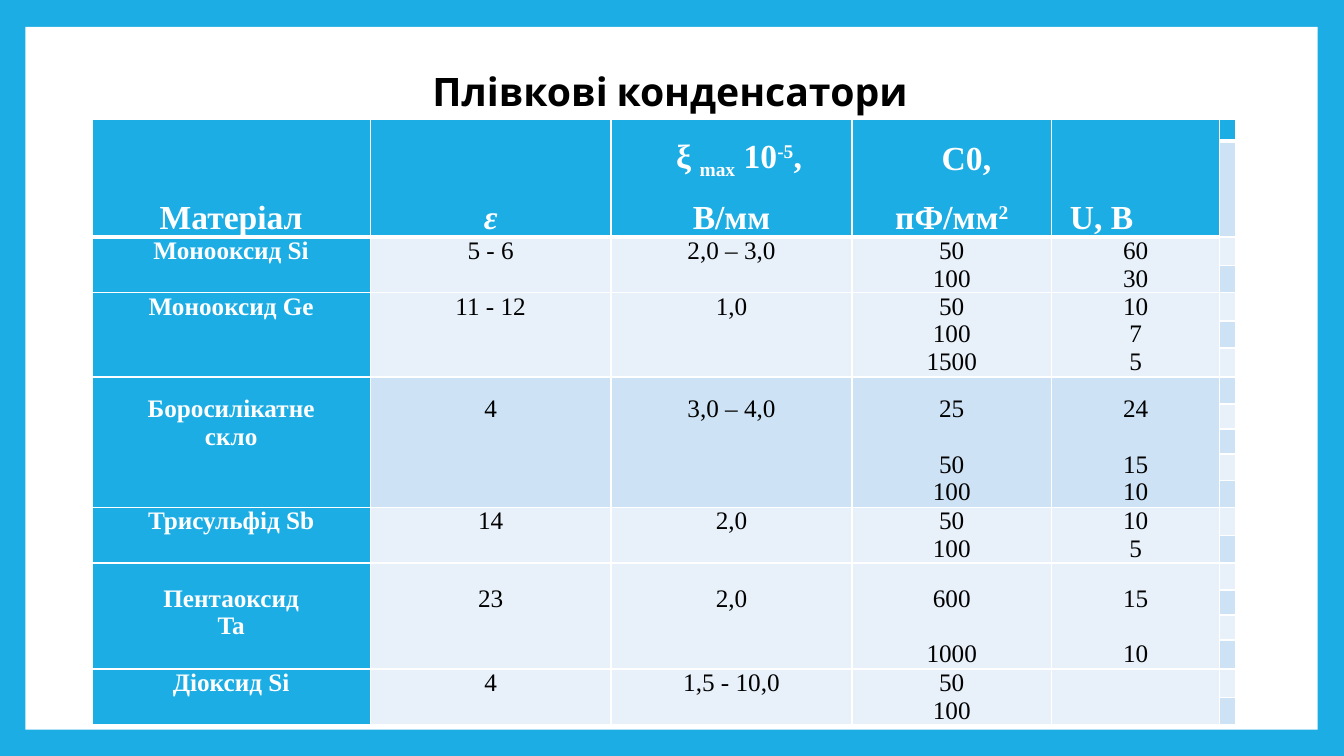
import pptx
import pptx.util
import pptx.dml.color
import pptx.enum.shapes
import pptx.enum.text
import lxml.etree
from pptx.util import Cm, Pt

COLORS = {"blue": "1CADE4", "white": "FFFFFF", "black": "000000",
          "dark_band": "CDE3F5", "light_band": "E8F1FA"}
TABLE_FONT = "Times New Roman"
CENTER = pptx.enum.text.PP_ALIGN.CENTER
LEFT = pptx.enum.text.PP_ALIGN.LEFT
TOP = pptx.enum.text.MSO_ANCHOR.TOP
BOTTOM = pptx.enum.text.MSO_ANCHOR.BOTTOM
HEADER_LINE = 26
VALUE_LINE = 19.8

COLUMN_WIDTHS = [7.01, 6.07, 6.07, 5.03, 4.24, 0.41]
HEADER_HEIGHTS = [0.53, 2.42]
PAIR_HEIGHTS = [0.71, 0.7]

HEADERS = [
    [{"spans": [("Матеріал", 0)]}],
    [{"spans": [("ε", 0)], "italic": True}],
    [{"spans": [("ξ ", 0), ("max", -25), (" 10", 0), ("-5", 30), (",", 0)],
      "indent": 0.38},
     {"spans": [("В/мм", 0)], "before": 14}],
    [{"spans": [("C0,", 0)], "indent": 0.74},
     {"spans": [("пФ/мм", 0), ("2", 30)], "before": 16}],
    [{"spans": [("U, B", 0)], "indent": 0.46, "align": LEFT}],
]

MATERIALS = [
    (PAIR_HEIGHTS, 0,
     [["Монооксид Si"], ["5 - 6"], ["2,0 – 3,0"], ["50", "100"], ["60", "30"]]),
    ([0.71, 0.68, 0.73], 0,
     [["Монооксид Ge"], ["11 - 12"], ["1,0"], ["50", "100", "1500"], ["10", "7", "5"]]),
    ([0.68, 0.63, 0.63, 0.66, 0.68], 0.46,
     [["Боросилікатне", "скло"], ["4"], ["3,0 – 4,0"],
      ["25", None, "50", "100"], ["24", None, "15", "10"]]),
    (PAIR_HEIGHTS, 0,
     [["Трисульфід Sb"], ["14"], ["2,0"], ["50", "100"], ["10", "5"]]),
    ([0.68, 0.63, 0.63, 0.73], 0.55,
     [["Пентаоксид", "Ta"], ["23"], ["2,0"], ["600", None, "1000"], ["15", None, "10"]]),
    (PAIR_HEIGHTS, 0,
     [["Діоксид Si"], ["4"], ["1,5 - 10,0"], ["50", "100"], []]),
]


def rgb(name):
    return pptx.dml.color.RGBColor.from_string(COLORS[name])


def style_font(font, name, size, color, bold, italic=False):
    font.name = name
    font.size = Pt(size)
    font.bold = bold
    font.italic = italic
    font.color.rgb = rgb(color)


def add_panel(page):
    panel = page.shapes.add_shape(pptx.enum.shapes.MSO_SHAPE.RECTANGLE,
                                  Cm(0.64), Cm(0.68), Cm(32.57), Cm(17.71))
    panel.shadow.inherit = False
    panel.fill.solid()
    panel.fill.fore_color.rgb = rgb("white")
    panel.line.fill.background()


def add_title(page, text):
    box = page.shapes.add_textbox(Cm(3.17), Cm(1.3), Cm(27.43), Cm(2.13))
    box.text_frame.word_wrap = True
    box.text_frame.vertical_anchor = pptx.enum.text.MSO_ANCHOR.MIDDLE
    para = box.text_frame.paragraphs[0]
    para.text = text
    para.alignment = CENTER
    para.line_spacing = 0.9
    style_font(para.font, "Cabin", 28, "black", True)


def set_borders(cell, bottom_width):
    properties = cell._tc.get_or_add_tcPr()
    for side, width in (("lnL", 1), ("lnR", 1), ("lnT", 1), ("lnB", bottom_width)):
        namespace = "http://schemas.openxmlformats.org/drawingml/2006/main"
        line = lxml.etree.SubElement(properties, f"{{{namespace}}}{side}", w=str(Pt(width)))
        fill = lxml.etree.SubElement(line, f"{{{namespace}}}solidFill")
        lxml.etree.SubElement(fill, f"{{{namespace}}}srgbClr", val=COLORS["white"])


def prepare_cell(cell, color, bottom_width=1):
    cell.margin_left = cell.margin_right = cell.margin_top = cell.margin_bottom = 0
    set_borders(cell, bottom_width)
    cell.fill.solid()
    cell.fill.fore_color.rgb = rgb(color)
    cell.text_frame.paragraphs[0]._p.get_or_add_endParaRPr().set("sz", "600")


def next_paragraph(frame, index, line_height):
    para = frame.add_paragraph() if index else frame.paragraphs[0]
    para.line_spacing = Pt(line_height)
    return para


def write_header(cell, lines):
    cell.vertical_anchor = BOTTOM
    for index, line in enumerate(lines):
        para = next_paragraph(cell.text_frame, index, HEADER_LINE)
        para.alignment = line.get("align", CENTER)
        para._p.get_or_add_pPr().set("marL", str(Cm(line.get("indent", 0))))
        if "before" in line:
            para.space_before = Pt(line["before"])
        style_font(para.font, TABLE_FONT, 24, "white", True, line.get("italic", False))
        for text, baseline in line["spans"]:
            span = para.add_run()
            span.text = text
            if baseline:
                span._r.get_or_add_rPr().set("baseline", str(baseline * 1000))


def write_values(cell, lines, top_margin, color, bold):
    cell.vertical_anchor = TOP
    cell.margin_top = Cm(top_margin)
    values = [line for line in lines if line]
    for index, value in enumerate(values):
        para = next_paragraph(cell.text_frame, index, VALUE_LINE)
        para.text = value
        para.alignment = CENTER
        if index and lines[lines.index(value) - 1] is None:
            para.space_before = Pt(VALUE_LINE)
        style_font(para.font, TABLE_FONT, 18, color, bold)


def band_color(row):
    return "dark_band" if row % 2 else "light_band"


def add_capacitor_table(page):
    heights = HEADER_HEIGHTS + [height for group in MATERIALS for height in group[0]]
    table = page.shapes.add_table(len(heights), len(COLUMN_WIDTHS), Cm(2.32), Cm(3.02),
                                  Cm(sum(COLUMN_WIDTHS)), Cm(sum(heights))).table
    table.first_row = table.horz_banding = False
    for column, width in zip(table.columns, COLUMN_WIDTHS):
        column.width = Cm(width)
    for row, height in zip(table.rows, heights):
        row.height = Cm(height)

    strip = len(COLUMN_WIDTHS) - 1
    for row in range(len(heights)):
        prepare_cell(table.cell(row, strip), band_color(row) if row else "blue",
                     1 if row else 3)

    for column, lines in enumerate(HEADERS):
        for row in range(len(HEADER_HEIGHTS)):
            prepare_cell(table.cell(row, column), "blue", 3)
        table.cell(0, column).merge(table.cell(1, column))
        write_header(table.cell(0, column), lines)

    start = len(HEADER_HEIGHTS)
    for group_heights, top_margin, columns in MATERIALS:
        end = start + len(group_heights)
        for column, lines in enumerate(columns):
            is_name = column == 0
            for row in range(start, end):
                prepare_cell(table.cell(row, column),
                             "blue" if is_name else band_color(start))
            table.cell(start, column).merge(table.cell(end - 1, column))
            write_values(table.cell(start, column), lines, top_margin,
                         "white" if is_name else "black", is_name)
        start = end


def main():
    deck = pptx.Presentation()
    deck.slide_width = Cm(33.87)
    deck.slide_height = Cm(19.05)
    page = deck.slides.add_slide(deck.slide_layouts[6])
    page.background.fill.solid()
    page.background.fill.fore_color.rgb = rgb("blue")
    add_panel(page)
    add_title(page, "Плівкові конденсатори")
    add_capacitor_table(page)
    deck.save("out.pptx")


if __name__ == "__main__":
    main()
